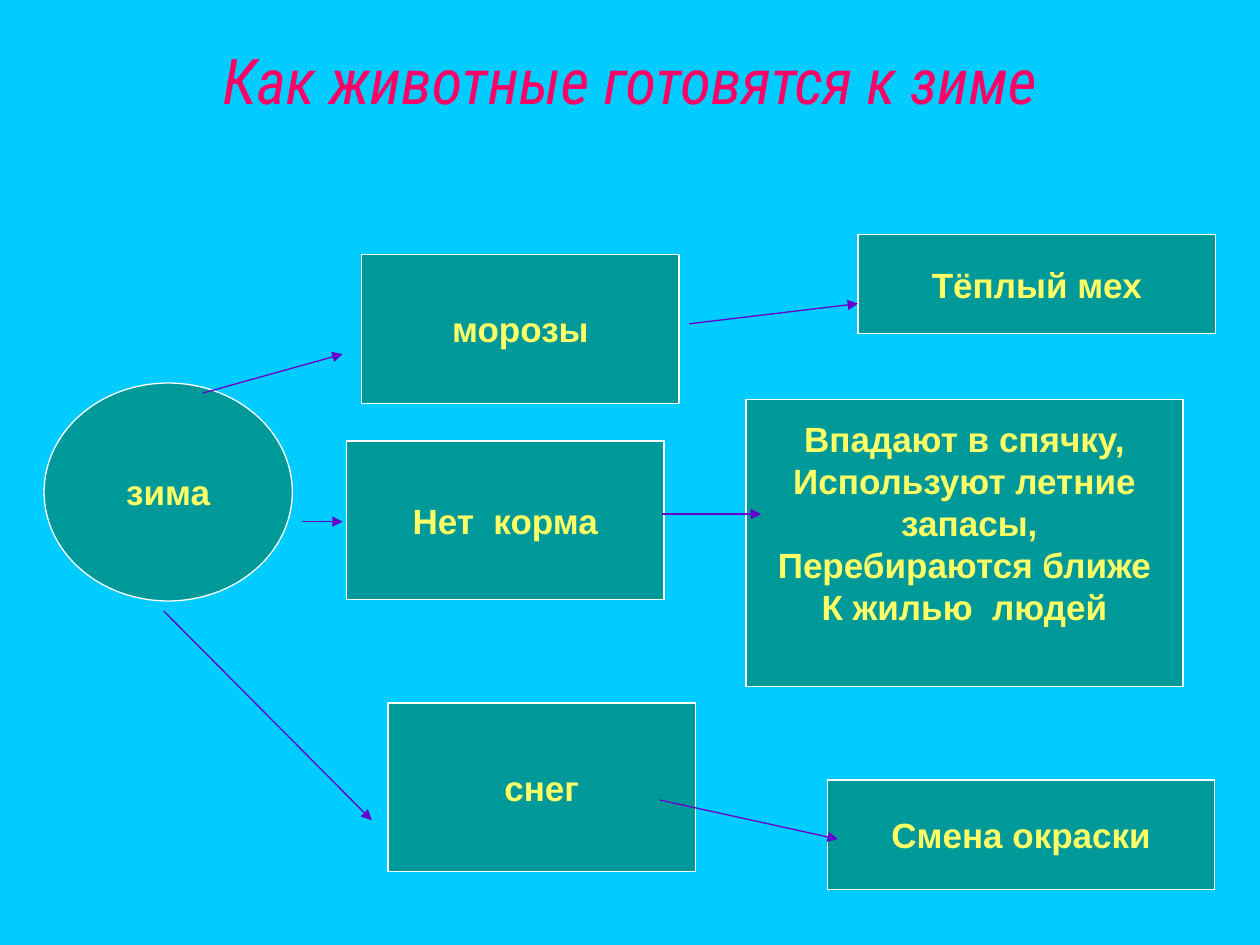
from dataclasses import dataclass

from lxml import etree
from pptx import Presentation
from pptx.dml.color import RGBColor
from pptx.enum.shapes import MSO_CONNECTOR, MSO_SHAPE
from pptx.enum.text import MSO_ANCHOR, PP_ALIGN
from pptx.oxml.ns import qn
from pptx.util import Inches, Pt

OVAL, RECT = MSO_SHAPE.OVAL, MSO_SHAPE.RECTANGLE
STRAIGHT = MSO_CONNECTOR.STRAIGHT
TOP, MIDDLE = MSO_ANCHOR.TOP, MSO_ANCHOR.MIDDLE
CENTER = PP_ALIGN.CENTER


@dataclass(frozen=True)
class Theme:
    background: RGBColor = RGBColor.from_string("00CCFF")
    title: RGBColor = RGBColor.from_string("FF0066")
    box: RGBColor = RGBColor.from_string("009999")
    border: RGBColor = RGBColor.from_string("FFFFFF")
    label: RGBColor = RGBColor.from_string("FFFF66")
    arrow: RGBColor = RGBColor.from_string("6600CC")
    title_font: str = "Roboto Condensed"
    label_font: str = "Arial"
    title_size: Pt = Pt(36)
    label_size: Pt = Pt(20)
    line_width: Pt = Pt(0.75)


theme = Theme()
prs = Presentation()
prs.slide_width, prs.slide_height = Inches(10), Inches(7.5)
s = prs.slides.add_slide(prs.slide_layouts[5])
s.background.fill.solid()
s.background.fill.fore_color.rgb = theme.background

title = s.shapes.title
title.left, title.top = Inches(1.5), Inches(0.28)
title.width, title.height = Inches(7), Inches(1.18)
tf = title.text_frame
tf.text = "Как животные готовятся к зиме"
tf.word_wrap = False
tf.vertical_anchor = TOP
p = tf.paragraphs[0]
p.alignment = CENTER
p.font.name = theme.title_font
p.font.size = theme.title_size
p.font.italic = True
p.font.color.rgb = theme.title

HIBERNATION = (
    "Впадают в спячку,\nИспользуют летние\n запасы,\n"
    "Перебираются ближе\nК жилью  людей"
)
boxes = [
    (OVAL, 0.35, 3.04, 1.97, 1.73, 0.05, "зима"),
    (RECT, 2.87, 2.02, 2.52, 1.18, 0.05, "морозы"),
    (RECT, 2.75, 3.5, 2.52, 1.26, 0.05, "Нет  корма"),
    (RECT, 3.08, 5.58, 2.44, 1.34, 0.05, "снег"),
    (RECT, 6.81, 1.86, 2.84, 0.79, 0.05, "Тёплый мех"),
    (RECT, 5.92, 3.17, 3.47, 2.28, 0.38, HIBERNATION),
    (RECT, 6.57, 6.19, 3.07, 0.87, 0.05, "Смена окраски"),
]
for kind, left, top, width, height, bottom_inset, text in boxes:
    sp = s.shapes.add_shape(kind, Inches(left), Inches(top), Inches(width), Inches(height))
    sp.shadow.inherit = False
    sp.fill.solid()
    sp.fill.fore_color.rgb = theme.box
    sp.line.color.rgb = theme.border
    sp.line.width = theme.line_width
    tf = sp.text_frame
    tf.text = text
    tf.word_wrap = False
    tf.vertical_anchor = MIDDLE
    tf.margin_bottom = Inches(bottom_inset)
    for p in tf.paragraphs:
        p.alignment = CENTER
        p.font.name = theme.label_font
        p.font.size = theme.label_size
        p.font.bold = True
        p.font.color.rgb = theme.label

arrows = [
    (1.61, 3.12, 2.72, 2.81),
    (2.4, 4.14, 2.72, 4.14),
    (1.3, 4.85, 2.95, 6.51),
    (5.47, 2.57, 6.81, 2.41),
    (5.25, 4.08, 6.04, 4.08),
    (5.24, 6.35, 6.65, 6.66),
]
for ends in arrows:
    arrow = s.shapes.add_connector(STRAIGHT, *[Inches(v) for v in ends])
    arrow.line.color.rgb = theme.arrow
    arrow.line.width = theme.line_width
    etree.SubElement(arrow.line._get_or_add_ln(), qn("a:tailEnd"), type="triangle")
    etree.SubElement(arrow._element.spPr, qn("a:effectLst"))

prs.save("out.pptx")
